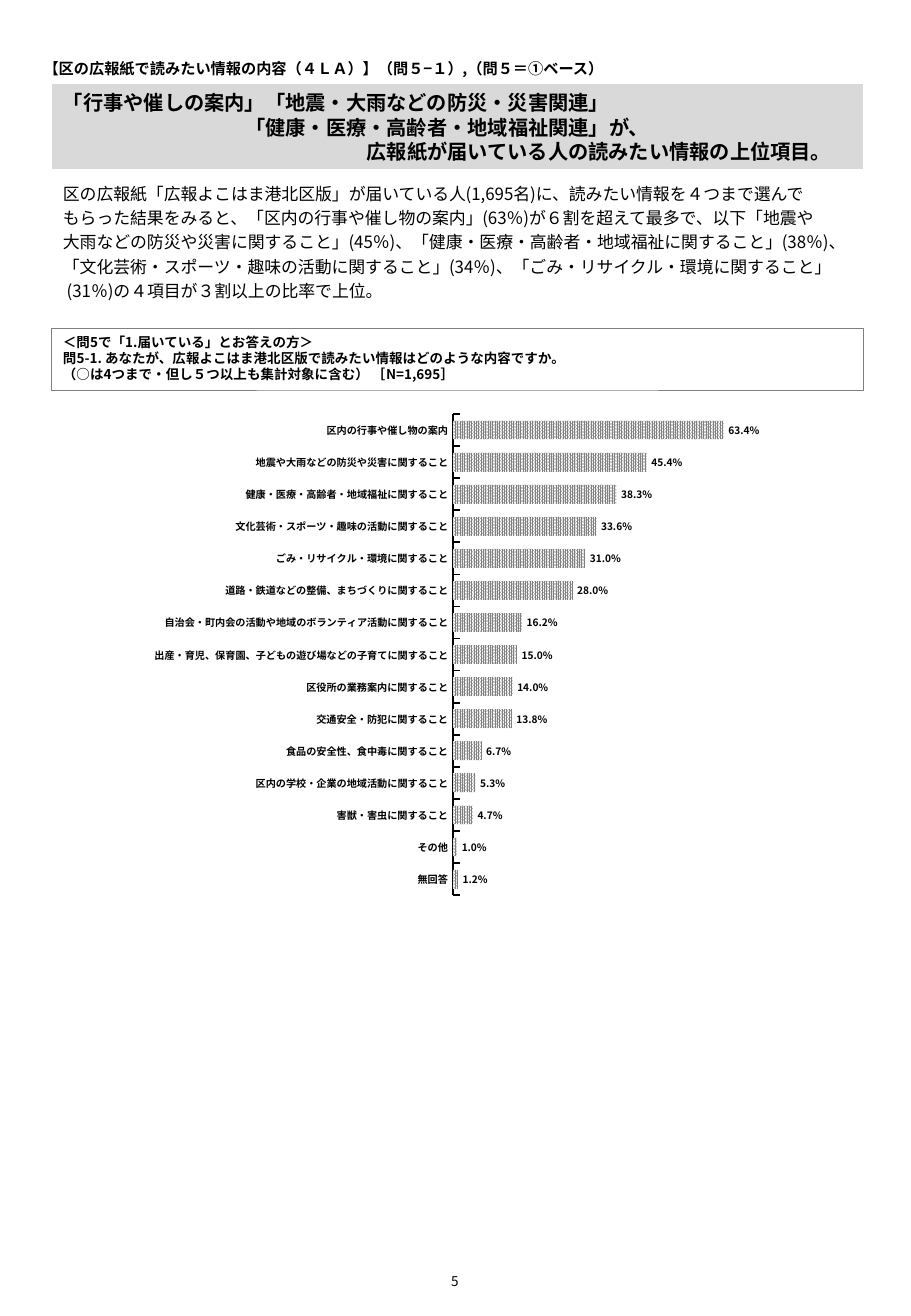
from lxml import etree
from pptx import Presentation
from pptx import util as u
from pptx.chart import data as chart_data
from pptx.dml import color
from pptx.enum import chart as ch, dml, shapes, text
from pptx.oxml import ns, parse_xml

PX = 9144  # 100 px to the inch
FONT = "Noto Sans CJK JP"

HEADING = "【区の広報紙で読みたい情報の内容（４ＬＡ）】（問５−１）,（問５＝①ベース）"
HEADLINES = [
    ("「行事や催しの案内」「地震・大雨などの防災・災害関連」", 0),
    ("「健康・医療・高齢者・地域福祉関連」が、", 150),
    ("広報紙が届いている人の読みたい情報の上位項目。", 250),
]
SUMMARY = [
    "区の広報紙「広報よこはま港北区版」が届いている人(1,695名)に、読みたい情報を４つまで選んで",
    "もらった結果をみると、「区内の行事や催し物の案内」(63％)が６割を超えて最多で、以下「地震や",
    "大雨などの防災や災害に関すること」(45％)、「健康・医療・高齢者・地域福祉に関すること」(38％)、",
    "「文化芸術・スポーツ・趣味の活動に関すること」(34％)、「ごみ・リサイクル・環境に関すること」",
    " (31％)の４項目が３割以上の比率で上位。",
]
QUESTION = [
    "＜問5で「1.届いている」とお答えの方＞",
    "問5-1. あなたが、広報よこはま港北区版で読みたい情報はどのような内容ですか。",
    "（○は4つまで・但し５つ以上も集計対象に含む） ［N=1,695］",
]
TOPICS = {
    "区内の行事や催し物の案内": 0.634,
    "地震や大雨などの防災や災害に関すること": 0.454,
    "健康・医療・高齢者・地域福祉に関すること": 0.383,
    "文化芸術・スポーツ・趣味の活動に関すること": 0.336,
    "ごみ・リサイクル・環境に関すること": 0.31,
    "道路・鉄道などの整備、まちづくりに関すること": 0.28,
    "自治会・町内会の活動や地域のボランティア活動に関すること": 0.162,
    "出産・育児、保育園、子どもの遊び場などの子育てに関すること": 0.15,
    "区役所の業務案内に関すること": 0.14,
    "交通安全・防犯に関すること": 0.138,
    "食品の安全性、食中毒に関すること": 0.067,
    "区内の学校・企業の地域活動に関すること": 0.053,
    "害獣・害虫に関すること": 0.047,
    "その他": 0.01,
    "無回答": 0.012,
}


def rgb(value):
    return color.RGBColor.from_string(value)


def emu(box):
    return [n * PX for n in box]


def style_font(font, properties, size, bold):
    font.size, font.bold = u.Pt(size), bold
    font.color.rgb = rgb("000000")
    font.name = FONT
    etree.SubElement(properties, ns.qn("a:ea")).set("typeface", FONT)


def write(shape, lines, size, bold=False, align=text.PP_ALIGN.LEFT,
          anchor=text.MSO_ANCHOR.TOP, wrap=True):
    frame = shape.text_frame
    frame.text = "\n".join(lines)
    frame.word_wrap, frame.vertical_anchor = wrap, anchor
    for line in frame.paragraphs:
        line.alignment = align
        for run in line.runs:
            style_font(run.font, run.font._element, size, bold)
    return frame.paragraphs


def add_panel(slide, box, line, width, fill=None):
    panel = slide.shapes.add_shape(shapes.MSO_SHAPE.RECTANGLE, *emu(box))
    panel.shadow.inherit = False
    if fill:
        panel.fill.solid()
        panel.fill.fore_color.rgb = rgb(fill)
    else:
        panel.fill.background()
    panel.line.color.rgb = rgb(line)
    panel.line.width = u.Pt(width)
    return panel


def add_heading(slide, box):
    write(slide.shapes.add_textbox(*emu(box)), [HEADING], 9, True, wrap=False)


def add_headline(slide, box):
    banner = add_panel(slide, box, "FFFFFF", 0.75, "D9D9D9")
    lines = write(banner, [line for line, _ in HEADLINES], 12, True,
                  anchor=text.MSO_ANCHOR.MIDDLE)
    for line, (_, indent) in zip(lines, HEADLINES):
        line._p.get_or_add_pPr().set("marL", str(indent * PX))


def add_summary(slide, box):
    lines = write(slide.shapes.add_textbox(*emu(box)), SUMMARY, 10)
    for line in lines[1:]:
        line.space_before = u.Pt(2.4)


def add_question(slide, box):
    write(add_panel(slide, box, "808080", 0.5), QUESTION, 8, True)


def add_topic_chart(slide, box):
    topics = chart_data.CategoryChartData()
    topics.categories = list(TOPICS)
    topics.add_series("Series 1", list(TOPICS.values()))
    chart = slide.shapes.add_chart(ch.XL_CHART_TYPE.BAR_CLUSTERED, *emu(box), topics).chart
    chart.has_legend = chart.has_title = False
    font = chart.font
    style_font(font, font._element, 6, True)

    # Bars and their values
    plot = chart.plots[0]
    plot.gap_width, plot.vary_by_categories = 70, False
    bars = plot.series[0].format.fill
    bars.patterned()
    bars.pattern = dml.MSO_PATTERN.PERCENT_90
    bars.fore_color.rgb, bars.back_color.rgb = rgb("808080"), rgb("FFFFFF")
    plot.has_data_labels = True
    labels = plot.data_labels
    labels.show_value = True
    labels.number_format, labels.number_format_is_linked = "0.0%", False
    labels.position = ch.XL_LABEL_POSITION.OUTSIDE_END

    # Axes
    names, shares = chart.category_axis, chart.value_axis
    names.reverse_order = True
    names.major_tick_mark = ch.XL_TICK_MARK.INSIDE
    names.format.line.color.rgb = rgb("000000")
    names.format.line.width = u.Pt(1)
    shares.minimum_scale, shares.maximum_scale = 0, 1
    shares.has_major_gridlines = False
    shares.major_tick_mark = ch.XL_TICK_MARK.NONE
    shares.tick_label_position = ch.XL_TICK_LABEL_POSITION.NONE
    shares.format.line.fill.background()

    # Inner plot area as fractions of the chart
    parts = "".join(f'<c:{side}Mode val="edge"/>' for side in "xy")
    parts += "".join(f'<c:{side} val="{part}"/>' for side, part in
                     zip("xywh", (0.497, 0.037, 0.478, 0.932)))
    layout = parse_xml(f'<c:layout {ns.nsdecls("c")}><c:manualLayout>'
                       f'<c:layoutTarget val="inner"/>{parts}</c:manualLayout></c:layout>')
    area = chart._chartSpace.chart.plotArea
    for automatic in area.findall(ns.qn("c:layout")):
        area.remove(automatic)
    area.insert(0, layout)


def add_page_number(slide, box):
    write(slide.shapes.add_textbox(*emu(box)), ["5"], 8,
          align=text.PP_ALIGN.CENTER, anchor=text.MSO_ANCHOR.MIDDLE)


def main():
    deck = Presentation()
    deck.slide_width, deck.slide_height = 750 * PX, 1083 * PX
    slide = deck.slides.add_slide(deck.slide_layouts[6])
    add_heading(slide, (26, 44, 591, 25))
    add_headline(slide, (42, 69, 669, 71))
    add_summary(slide, (42, 146, 680, 102))
    add_question(slide, (42, 270, 669, 51))
    add_topic_chart(slide, (7, 325, 736, 425))
    add_page_number(slide, (287, 1025, 175, 58))
    deck.save("out.pptx")


if __name__ == "__main__":
    main()
